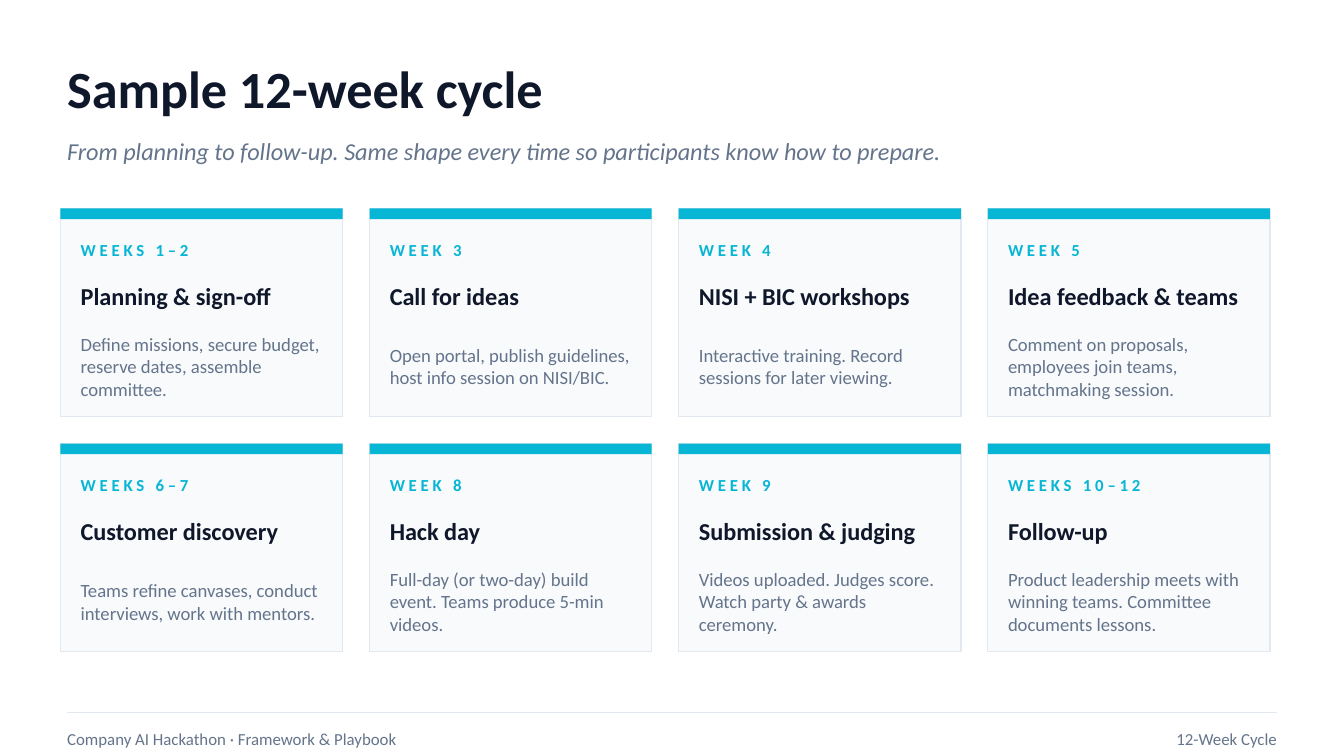
from pptx import Presentation
from pptx.dml.color import RGBColor
from pptx.enum.shapes import MSO_CONNECTOR, MSO_SHAPE
from pptx.enum.text import MSO_ANCHOR, MSO_AUTO_SIZE, PP_ALIGN
from pptx.oxml.ns import qn
from pptx.util import Inches, Pt
from lxml.etree import SubElement

INK = RGBColor(0x0F, 0x17, 0x2A)
SLATE = RGBColor(0x64, 0x74, 0x8B)
CYAN = RGBColor(0x06, 0xB6, 0xD4)
CARD_FILL = RGBColor(0xF8, 0xFA, 0xFC)
BORDER = RGBColor(0xE2, 0xE8, 0xF0)

SLIDE_WIDTH = 10
CARD_WIDTH, CARD_HEIGHT, GAP = 2.1, 1.55, 0.2
GRID_LEFT, GRID_TOP, COLUMNS = 0.45, 1.55, 4
PADDING, TEXT_WIDTH = 0.15, 1.85

PHASES = [
    ("WEEKS 1–2", "Planning & sign-off",
     "Define missions, secure budget, reserve dates, assemble committee."),
    ("WEEK 3", "Call for ideas",
     "Open portal, publish guidelines, host info session on NISI/BIC."),
    ("WEEK 4", "NISI + BIC workshops",
     "Interactive training. Record sessions for later viewing."),
    ("WEEK 5", "Idea feedback & teams",
     "Comment on proposals, employees join teams, matchmaking session."),
    ("WEEKS 6–7", "Customer discovery",
     "Teams refine canvases, conduct interviews, work with mentors."),
    ("WEEK 8", "Hack day",
     "Full-day (or two-day) build event. Teams produce 5-min videos."),
    ("WEEK 9", "Submission & judging",
     "Videos uploaded. Judges score. Watch party & awards ceremony."),
    ("WEEKS 10–12", "Follow-up",
     "Product leadership meets with winning teams. Committee documents lessons."),
]

prs = Presentation()
prs.slide_width = Inches(SLIDE_WIDTH)
prs.slide_height = Inches(SLIDE_WIDTH * 9 / 16)
slide = prs.slides.add_slide(prs.slide_layouts[5])
shapes = slide.shapes


def write(text, box, size, color, bold=False, italic=False,
          align=PP_ALIGN.LEFT, holder=None):
    left, top, width, height = [Inches(round(value, 2)) for value in box]
    holder = holder or shapes.add_textbox(left, top, width, height)
    holder.left, holder.top, holder.width, holder.height = left, top, width, height
    frame = holder.text_frame
    frame.word_wrap = True
    frame.auto_size = MSO_AUTO_SIZE.NONE
    frame.vertical_anchor = MSO_ANCHOR.MIDDLE
    frame.margin_left = frame.margin_right = 0
    frame.margin_top = frame.margin_bottom = 0
    paragraph = frame.paragraphs[0]
    paragraph.alignment = align
    run = paragraph.add_run()
    run.text = text
    run.font.name, run.font.size = "Calibri", Pt(size)
    run.font.bold, run.font.italic = bold, italic
    run.font.color.rgb = color
    return run


def add_block(left, top, height, fill):
    block = shapes.add_shape(MSO_SHAPE.RECTANGLE, Inches(left), Inches(top),
                             Inches(CARD_WIDTH), Inches(height))
    block.shadow.inherit = False
    block.fill.solid()
    block.fill.fore_color.rgb = fill
    return block


write("Sample 12-week cycle", (0.5, 0.35, 9, 0.6), 28, INK, bold=True,
      holder=shapes.title)
write("From planning to follow-up. Same shape every time so participants know how to prepare.",
      (0.5, 0.95, 9, 0.35), 13, SLATE, italic=True)

for index, (weeks, phase, details) in enumerate(PHASES):
    row, column = divmod(index, COLUMNS)
    left = round(GRID_LEFT + column * (CARD_WIDTH + GAP), 2)
    top = round(GRID_TOP + row * (CARD_HEIGHT + GAP), 2)
    text_left = left + PADDING

    card = add_block(left, top, CARD_HEIGHT, CARD_FILL)
    card.line.color.rgb = BORDER
    card.line.width = Pt(0.75)
    accent = add_block(left, top, 0.08, CYAN)
    accent.line.fill.background()

    weeks_run = write(weeks, (text_left, top + 0.18, TEXT_WIDTH, 0.25), 9, CYAN, bold=True)
    weeks_run.font._element.set("spc", "200")
    write(phase, (text_left, top + 0.45, TEXT_WIDTH, 0.4), 13, INK, bold=True)
    write(details, (text_left, top + 0.85, TEXT_WIDTH, 0.65), 10, SLATE)

footer_rule = shapes.add_connector(MSO_CONNECTOR.STRAIGHT, Inches(0.5), Inches(5.3),
                                   Inches(9.5), Inches(5.3))
footer_rule.line.color.rgb = BORDER
footer_rule.line.width = Pt(0.75)
SubElement(footer_rule._element.spPr, qn("a:effectLst"))

write("Company AI Hackathon · Framework & Playbook", (0.5, 5.35, 5.5, 0.3), 9, SLATE)
write("12-Week Cycle", (6, 5.35, 3.5, 0.3), 9, SLATE, align=PP_ALIGN.RIGHT)

prs.save("out.pptx")
